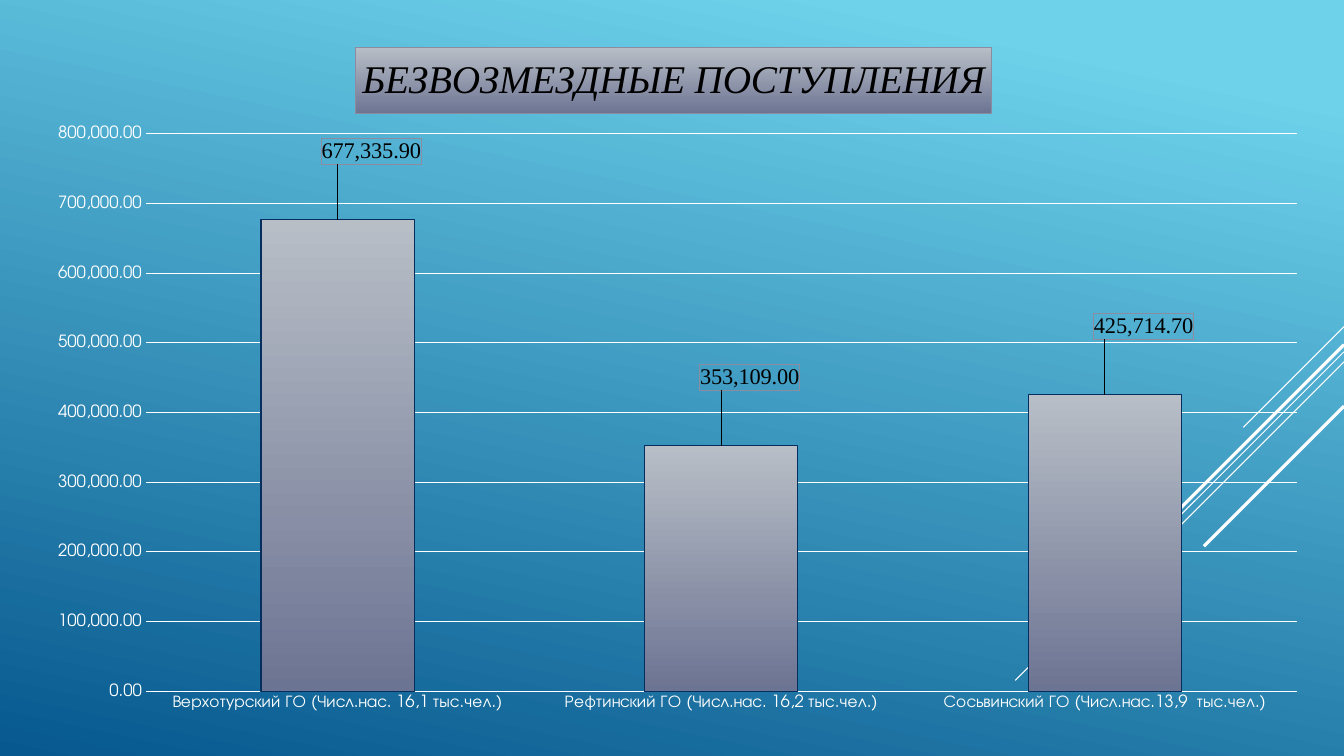
from lxml import etree
from pptx import Presentation
from pptx.chart.data import CategoryChartData
from pptx.dml.color import RGBColor
from pptx.enum.chart import XL_CHART_TYPE, XL_LABEL_POSITION, XL_TICK_MARK
from pptx.enum.shapes import MSO_CONNECTOR
from pptx.oxml import parse_xml
from pptx.oxml.ns import nsdecls, qn
from pptx.util import Inches, Pt

COLUMN = XL_CHART_TYPE.COLUMN_CLUSTERED
OUTSIDE_END = XL_LABEL_POSITION.OUTSIDE_END
NO_TICK = XL_TICK_MARK.NONE
STRAIGHT = MSO_CONNECTOR.STRAIGHT

WHITE = RGBColor(0xFF, 0xFF, 0xFF)
BLACK = RGBColor(0, 0, 0)
SKY = RGBColor(0x6E, 0xD2, 0xEB)
DEEP_BLUE = RGBColor(0x06, 0x58, 0x8E)
SILVER = RGBColor(0xB8, 0xBE, 0xC6)
SLATE = RGBColor(0x6C, 0x74, 0x93)
NAVY = RGBColor(0x05, 0x2E, 0x5F)
FRAME = RGBColor(0x8C, 0x8C, 0xA0)

BODY_FONT = "TeX Gyre Adventor"
TITLE_FONT = "Times New Roman"
NUMBER_FORMAT = "#,##0.00"
TITLE = "БЕЗВОЗМЕЗДНЫЕ ПОСТУПЛЕНИЯ"


def write_text(text_frame, text, font, size, color, italic=False):
    text_frame.text = text
    run_font = text_frame.paragraphs[0].runs[0].font
    run_font.name = font
    run_font.size = Pt(size)
    run_font.color.rgb = color
    run_font.italic = italic
    run_font.bold = False


def set_layout(parent, index, **values):
    for old_layout in parent.findall(qn("c:layout")):
        parent.remove(old_layout)
    layout = etree.Element(qn("c:layout"))
    manual = etree.SubElement(layout, qn("c:manualLayout"))
    for name, value in values.items():
        etree.SubElement(manual, qn(f"c:{name}")).set("val", str(value))
    parent.insert(index, layout)


presentation = Presentation()
presentation.slide_width = Inches(13.33)
presentation.slide_height = Inches(7.5)
slide = presentation.slides.add_slide(presentation.slide_layouts[6])

RIGHT_EDGE = 13.33
for top, run_length, width in [
    (3.24, 1.0, 0.75),
    (3.49, 3.26, 0.75),
    (3.59, 2.07, 0.75),
    (3.42, 1.91, 2.25),
    (4.03, 1.39, 2.25),
]:
    ray = slide.shapes.add_connector(
        STRAIGHT, Inches(RIGHT_EDGE), Inches(top),
        Inches(RIGHT_EDGE - run_length), Inches(top + run_length))
    ray.line.color.rgb = WHITE
    ray.line.width = Pt(width)
    etree.SubElement(ray.element.spPr, qn("a:effectLst"))

chart_data = CategoryChartData(number_format=NUMBER_FORMAT)
chart_data.categories = [
    "Верхотурский ГО (Числ.нас. 16,1 тыс.чел.)",
    "Рефтинский ГО (Числ.нас. 16,2 тыс.чел.)",
    "Сосьвинский ГО (Числ.нас.13,9  тыс.чел.)",
]
chart_data.add_series(TITLE, [677335.9, 353109, 425714.7])
chart = slide.shapes.add_chart(
    COLUMN, Inches(0.32), Inches(0.26), Inches(12.81), Inches(6.94), chart_data).chart
chart.has_legend = False
chart.font.name = BODY_FONT
chart.font.size = Pt(10)
chart.font.color.rgb = WHITE

title = chart.chart_title
write_text(title.text_frame, TITLE, TITLE_FONT, 28, BLACK, italic=True)
title.format.line.color.rgb = FRAME
title.format.line.width = Pt(0.75)
title_element = title.text_frame._txBody.getparent().getparent()
set_layout(title_element, 1, xMode="edge", yMode="edge", x=0.25, y=0.03)

plot = chart.plots[0]
plot.gap_width = 150
plot.vary_by_categories = False
plot_area = chart.element.find(".//" + qn("c:plotArea"))
set_layout(plot_area, 0, layoutTarget="inner", xMode="edge", yMode="edge",
           x=0.088, y=0.154, w=0.891, h=0.797)

value_axis = chart.value_axis
value_axis.minimum_scale = 0
value_axis.maximum_scale = 800000
value_axis.major_unit = 100000
value_axis.tick_labels.number_format = NUMBER_FORMAT
value_axis.tick_labels.number_format_is_linked = False
value_axis.major_gridlines.format.line.color.rgb = WHITE
value_axis.major_gridlines.format.line.width = Pt(0.75)
for axis in (chart.category_axis, value_axis):
    axis.major_tick_mark = NO_TICK
    axis.minor_tick_mark = NO_TICK
    axis.format.line.fill.background()
    axis.tick_labels.font.name = BODY_FONT
    axis.tick_labels.font.size = Pt(12)
    axis.tick_labels.font.color.rgb = WHITE

series = plot.series[0]
series.format.line.color.rgb = NAVY
series.format.line.width = Pt(0.75)
for fill, angle, first_position, first_color, last_color in [
    (slide.background.fill, 258, 0.1, SKY, DEEP_BLUE),
    (title.format.fill, 270, 0, SILVER, SLATE),
    (series.format.fill, 270, 0, SILVER, SLATE),
]:
    fill.gradient()
    fill.gradient_angle = angle
    first_stop, last_stop = fill.gradient_stops
    first_stop.position = first_position
    first_stop.color.rgb = first_color
    last_stop.position = 1
    last_stop.color.rgb = last_color

series.data_labels.show_value = True
series.data_labels.number_format = NUMBER_FORMAT
series.data_labels.number_format_is_linked = False
for index, shift in enumerate([0.026, 0.022, 0.03]):
    label = series.points[index].data_label
    label.position = OUTSIDE_END
    label.font.name = TITLE_FONT
    label.font.size = Pt(16)
    label.font.color.rgb = BLACK
    label_element = series.data_labels._element.findall(qn("c:dLbl"))[index]
    for old_properties in label_element.findall(qn("c:spPr")):
        label_element.remove(old_properties)
    set_layout(label_element, 1, x=shift, y=-0.073)
    label_element.insert(2, parse_xml(
        f'<c:numFmt {nsdecls("c")} formatCode="{NUMBER_FORMAT}" sourceLinked="0"/>'))
    label_element.insert(3, parse_xml(
        f'<c:spPr {nsdecls("c", "a")}><a:noFill/><a:ln w="9525"><a:solidFill>'
        f'<a:srgbClr val="{FRAME}"/></a:solidFill></a:ln></c:spPr>'))

presentation.save("out.pptx")
